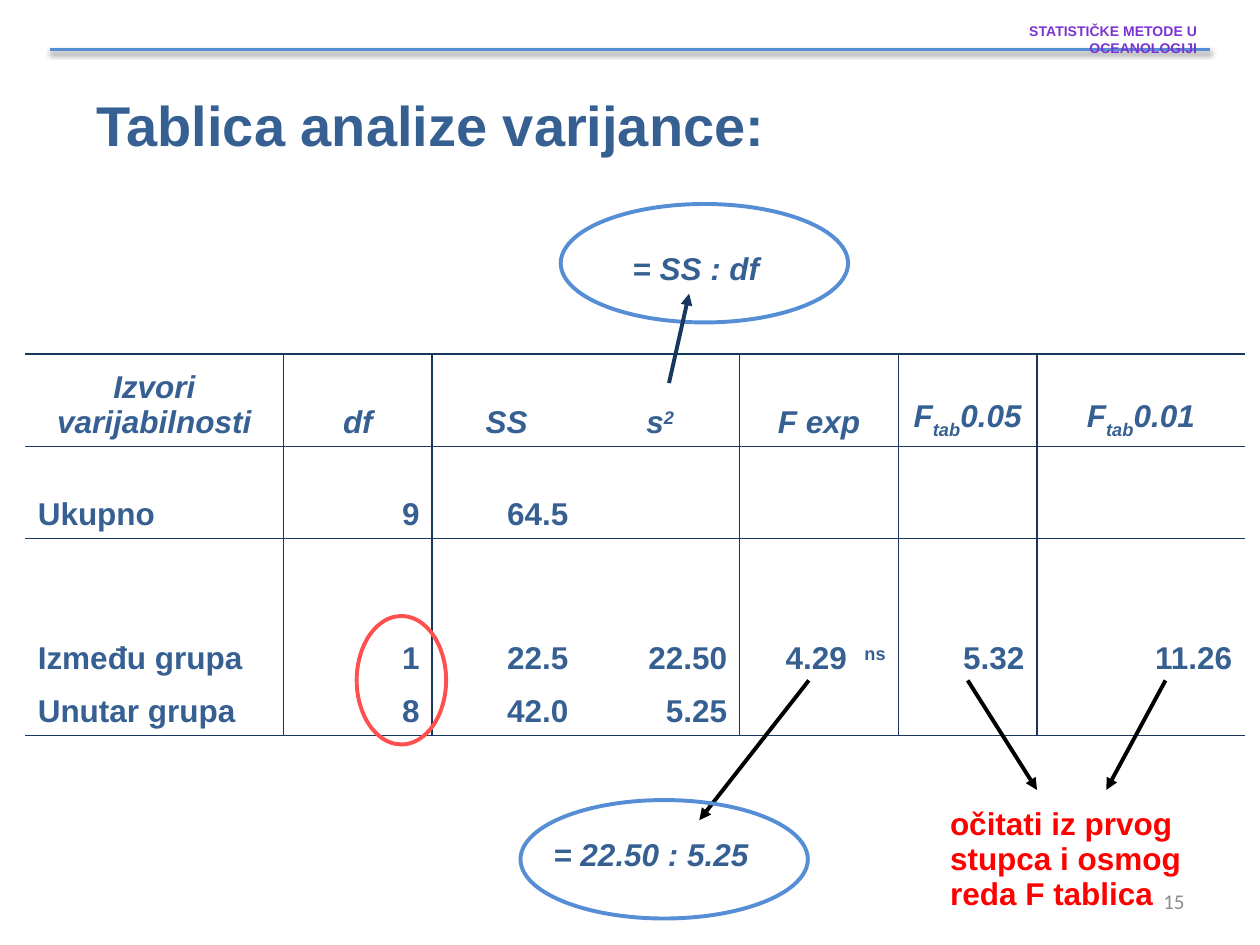
"""Builds the slide with the analysis of variance table."""
from dataclasses import dataclass

from lxml.etree import SubElement
from pptx import Presentation
from pptx.dml.color import RGBColor
from pptx.enum.shapes import MSO_CONNECTOR, MSO_SHAPE
from pptx.enum.text import MSO_ANCHOR, PP_ALIGN
from pptx.oxml.ns import qn
from pptx.util import Pt

COLORS = {"title": "376092", "rule": "558ED5", "border": "17375E", "course": "7B34D2",
          "number": "8C8C8C", "warning": "FF0000", "mark": "FF5050", "black": "000000"}
PLAIN_TABLE = "{2D5ABB26-0587-4C30-8999-92F81FD0307C}"
LEFT, CENTER, RIGHT = PP_ALIGN.LEFT, PP_ALIGN.CENTER, PP_ALIGN.RIGHT


@dataclass(frozen=True)
class Span:
    text: str
    baseline: int = 0
    spacing: int = 0


@dataclass(frozen=True)
class Note:
    text: str
    left: float
    top: float
    width: float
    height: float
    size: float = 18
    color: str = "title"
    italic: bool = True


@dataclass(frozen=True)
class Oval:
    left: float
    top: float
    width: float
    height: float
    color: str = "rule"


@dataclass(frozen=True)
class Arrow:
    start: tuple[float, float]
    end: tuple[float, float]
    color: str = "black"


def f_limit(level: str) -> list[Span]:
    """Return the heading of a tabulated F value."""
    return [Span("F"), Span("tab", -30000), Span(level)]


COLUMNS = [147.6, 85, 85, 90.7, 90.7, 79.2, 118.8]
ROWS = [53, 52.5, 52.5, 30, 30]
RULED_COLUMNS = {0, 3, 4}
RULED_ROWS = {0, len(ROWS) - 1}
CELLS = [
    ["Izvori varijabilnosti", "df", "SS", [Span("s"), Span("2", 30000)], "F exp",
     f_limit("0.05"), f_limit("0.01")],
    ["Ukupno", "9", "64.5", "", "", "", ""],
    [""] * len(COLUMNS),
    ["Između grupa", "1", "22.5", "22.50",
     [Span("4.29"), Span(" ", spacing=500), Span("ns", 30000)], "5.32", "11.26"],
    ["Unutar grupa", "8", "42.0", "5.25", "", "", ""],
]
TITLE = Note("Tablica analize varijance:", 48, 43.2, 527, 51, size=32, italic=False)
QUOTIENT = Note("= 22.50 : 5.25", 309, 468.7, 130.3, 34)
LOOKUP = Note("očitati iz prvog stupca i osmog reda F tablica", 535.7, 453, 156.2, 72,
              color="warning", italic=False)
VARIANCE = Note("= SS : df", 354.2, 134, 130.3, 34)
RESULT_ARROWS = [Arrow((462.2, 388.8), (399.6, 468.7)),
                 Arrow((553, 388.8), (592.6, 451.4)),
                 Arrow((666, 388.8), (632.2, 451.4))]
VARIANCE_ARROW = Arrow((382.3, 218.9), (393.8, 167.8), "border")


def write(frame, content, *, size=18, color="title", font="Arial", bold=True,
          italic=False, align=LEFT) -> None:
    """Write a string or a list of spans as the first paragraph of a frame."""
    para = frame.paragraphs[0]
    para.alignment = align
    for item in [Span(content)] if isinstance(content, str) else content:
        span = para.add_run()
        span.text = item.text
        span.font.size = Pt(size)
        span.font.name = font
        span.font.bold = bold
        span.font.italic = italic
        span.font.color.rgb = RGBColor.from_string(COLORS[color])
        properties = span._r.get_or_add_rPr()
        if item.baseline:
            properties.set("baseline", str(item.baseline))
        if item.spacing:
            properties.set("spc", str(item.spacing))


def add_text(page, text: str, left: float, top: float, width: float, height: float,
             anchor=MSO_ANCHOR.TOP, **style) -> None:
    """Add a wrapped, right-aligned text box."""
    box = page.shapes.add_textbox(Pt(left), Pt(top), Pt(width), Pt(height))
    box.text_frame.word_wrap = True
    box.text_frame.vertical_anchor = anchor
    write(box.text_frame, text, align=RIGHT, **style)


def add_grid(page, left: float, top: float, columns: list[float], rows: list[float]):
    """Add a table without style and return it."""
    table = page.shapes.add_table(len(rows), len(columns), Pt(left), Pt(top),
                                  Pt(sum(columns)), Pt(sum(rows))).table
    table.first_row = table.horz_banding = False
    table._tbl.tblPr.find(qn("a:tableStyleId")).text = PLAIN_TABLE
    for column, width in zip(table.columns, columns):
        column.width = Pt(width)
    for row, height in zip(table.rows, rows):
        row.height = Pt(height)
    for cell in table.iter_cells():
        cell.fill.background()
        cell.vertical_anchor = MSO_ANCHOR.BOTTOM
    return table


def add_borders(cell, sides: list[str]) -> None:
    """Draw the named sides of a cell ahead of its fill."""
    properties = cell._tc.get_or_add_tcPr()
    for position, side in enumerate(sides):
        line = SubElement(properties, qn(f"a:{side}"), w=str(Pt(1)))
        fill = SubElement(line, qn("a:solidFill"))
        SubElement(fill, qn("a:srgbClr"), val=COLORS["border"])
        properties.insert(position, line)


def add_variance_table(page) -> None:
    """Add the analysis of variance table."""
    table = add_grid(page, 14.4, 202.3, COLUMNS, ROWS)
    for row, contents in enumerate(CELLS):
        for column, content in enumerate(contents):
            cell = table.cell(row, column)
            align = CENTER if row == 0 else RIGHT if column else LEFT
            write(cell.text_frame, content, italic=row == 0, align=align)
            sides = {"lnL": column - 1 in RULED_COLUMNS, "lnR": column in RULED_COLUMNS,
                     "lnT": row in (0, 1), "lnB": row in RULED_ROWS}
            add_borders(cell, [side for side, drawn in sides.items() if drawn])


def add_note(page, note: Note) -> None:
    """Add a note as a table of one cell."""
    table = add_grid(page, note.left, note.top, [note.width], [note.height])
    write(table.cell(0, 0).text_frame, note.text, size=note.size, color=note.color,
          italic=note.italic)


def add_oval(page, oval: Oval) -> None:
    """Add an unfilled ellipse."""
    shape = page.shapes.add_shape(MSO_SHAPE.OVAL, Pt(oval.left), Pt(oval.top),
                                  Pt(oval.width), Pt(oval.height))
    shape.shadow.inherit = False
    shape.fill.background()
    shape.line.color.rgb = RGBColor.from_string(COLORS[oval.color])
    shape.line.width = Pt(2.25)


def add_line(page, path: Arrow, *, width: float = 2.25, head: bool = True,
             shadow: bool = False) -> None:
    """Add a straight line with an optional arrowhead and shadow."""
    line = page.shapes.add_connector(MSO_CONNECTOR.STRAIGHT, *map(Pt, path.start + path.end))
    line.line.color.rgb = RGBColor.from_string(COLORS[path.color])
    line.line.width = Pt(width)
    if head:
        SubElement(line.line._get_or_add_ln(), qn("a:tailEnd"), type="triangle")
    effects = SubElement(line._element.spPr, qn("a:effectLst"))
    if shadow:
        outer = SubElement(effects, qn("a:outerShdw"), blurRad=str(Pt(3.1)),
                           dist=str(Pt(1.6)), dir="5400000", rotWithShape="0")
        color = SubElement(outer, qn("a:srgbClr"), val=COLORS["black"])
        SubElement(color, qn("a:alpha"), val="38000")


def main() -> None:
    """Build and save the deck."""
    deck = Presentation()
    deck.slide_width, deck.slide_height = Pt(720), Pt(540)
    page = deck.slides.add_slide(deck.slide_layouts[6])
    add_text(page, "15", 516, 500.5, 168, 28.8, MSO_ANCHOR.MIDDLE, size=12,
             color="number", font="Calibri", bold=False)
    add_line(page, Arrow((28.4, 28.4), (691.6, 28.4), "rule"), width=2, head=False,
             shadow=True)
    add_text(page, "STATISTIČKE METODE U OCEANOLOGIJI", 541.4, 9.4, 149.8, 17.3,
             size=8, color="course")
    add_variance_table(page)
    for note in (TITLE, QUOTIENT, LOOKUP):
        add_note(page, note)
    for arrow in RESULT_ARROWS:
        add_line(page, arrow)
    add_oval(page, Oval(297.4, 457.2, 164.2, 67.7))
    add_note(page, VARIANCE)
    add_oval(page, Oval(320.4, 116.6, 164.2, 67.7))
    add_line(page, VARIANCE_ARROW)
    add_oval(page, Oval(203.8, 352, 51.1, 73.4, "mark"))
    deck.save("out.pptx")


if __name__ == "__main__":
    main()
